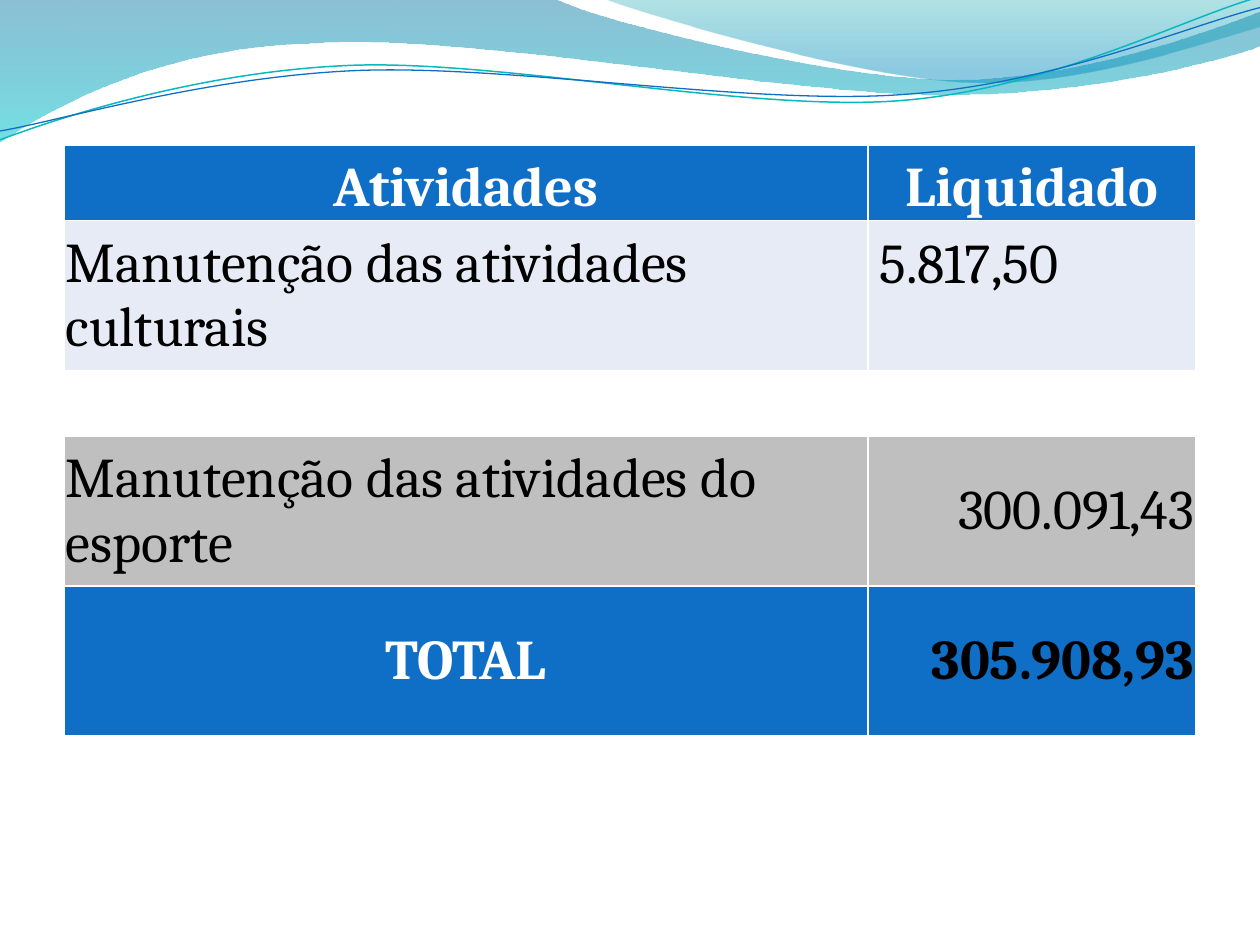
"""Builds a slide with a wave header and a table of settled spending."""
from math import cos, radians, sin

from lxml import etree
from pptx import Presentation
from pptx import util as u
from pptx.dml.color import RGBColor
from pptx.enum import text
from pptx.oxml.ns import qn

HUES = {"blue": "0F6FC6", "teal": "0AB8BF", "pale": "E7EBF5", "gray": "BFBFBF",
        "white": "FFFFFF", "black": "000000", "deep": "0074A1", "aqua": "00C6CF",
        "sea": "00A1A9", "sky": "008BBF"}
LEFT, MID, RIGHT = text.PP_ALIGN.LEFT, text.PP_ALIGN.CENTER, text.PP_ALIGN.RIGHT
SIZE, FACE = 32, "Cambria"
COLS = [6.38, 2.6]
ROWS = [
    (0.6, "blue", [("Atividades", MID, "white", True), ("Liquidado", MID, "white", True)]),
    (1.19, "pale", [("Manutenção das atividades culturais", LEFT, "black", False),
                    ("5.817,50", LEFT, "black", False)]),
    (0.49, "white", []),
    (1.19, "gray", [("Manutenção das atividades do esporte", LEFT, "black", False),
                    ("300.091,43", RIGHT, "black", False)]),
    (1.19, "blue", [("TOTAL", MID, "white", True), ("305.908,93", RIGHT, "black", True)]),
]
BANDS = [
    ((-0.01, -0.01, 10.02, 1.14),
     [(0, 0), (4.4, -0.01), (4.76, 0.17, 6.64, 0.63, 7.58, 0.63),
      (8.53, 0.63, 9.58, 0.26, 10, 0.09), (10.01, 0.36),
      (9.83, 0.44, 8.7, 0.76, 7.46, 0.75), (6.22, 0.75, 3.82, 0.28, 2.57, 0.34),
      (1.29, 0.36, 0.46, 0.83, -0.01, 1.13), (0, 0)],
     [(0, "deep", 45), (1, "aqua", 55)]),
    ((4.79, -0.01, 5.21, 0.7),
     [(4.79, -0.01), (5.09, 0.11, 6.82, 0.62, 7.69, 0.65),
      (8.56, 0.69, 9.61, 0.32, 10, 0.21), (10, 0), (4.79, -0.01)],
     [(0, "sea", 30), (0.8, "sky", 45)]),
]
WAVES = [
    ((-0.02, 0.22, 10.02, 0.71),
     [(0, 1.11), (0.48, 0.93, 1.58, 0.57, 2.77, 0.52),
      (3.95, 0.47, 5.93, 0.89, 7.13, 0.8), (8.33, 0.71, 9.38, 0.15, 9.98, -0.02)],
     "teal", 0.85),
    ((-0.02, 0.3, 10.03, 0.58),
     [(0, 1.04), (0.47, 0.96, 1.64, 0.61, 2.83, 0.56),
      (4.03, 0.51, 5.97, 0.84, 7.17, 0.75), (8.36, 0.67, 9.41, 0.21, 10, 0.06)],
     "blue", 0.75),
]
TILT = -2.7


def rgb(name):
    return RGBColor.from_string(HUES[name])


def local(box, x, y, tilt):
    left, top, wide, high = box
    turn = radians(-tilt)
    dx, dy = x - left - wide / 2, y - top - high / 2
    return (u.Inches(wide / 2 + dx * cos(turn) - dy * sin(turn)),
            u.Inches(high / 2 + dx * sin(turn) + dy * cos(turn)))


def draw(slide, box, segs, tilt=0, close=False):
    left, top, wide, high = (u.Inches(n) for n in box)
    pen = slide.shapes.build_freeform(left, top)
    pen.add_line_segments([(left + wide, top + high)], close=False)
    shape = pen.convert_to_shape()
    shape.shadow.inherit = False
    shape.rotation = tilt
    route = next(shape.element.iter(qn("a:path")))
    for node in list(route):
        route.remove(node)
    for n, seg in enumerate(segs):
        kind = "moveTo" if n == 0 else "lnTo" if len(seg) == 2 else "cubicBezTo"
        step = etree.SubElement(route, qn("a:" + kind))
        for spot in zip(seg[::2], seg[1::2]):
            x, y = local(box, *spot, tilt)
            etree.SubElement(step, qn("a:pt"), x=str(x), y=str(y))
    if close:
        etree.SubElement(route, qn("a:close"))
    return shape


def add_band(slide, box, segs, stops):
    shape = draw(slide, box, segs, close=True)
    shape.line.fill.background()
    shape.fill.gradient()
    shape.fill.gradient_angle = 270
    for stop, (pos, hue, alpha) in zip(shape.fill.gradient_stops, stops):
        stop.position = pos
        stop.color.rgb = rgb(hue)
    for node, (pos, hue, alpha) in zip(shape.element.spPr.iter(qn("a:srgbClr")), stops):
        etree.SubElement(node, qn("a:alpha"), val=str(alpha * 1000))


def add_wave(slide, box, segs, hue, width):
    shape = draw(slide, box, segs, TILT)
    shape.fill.background()
    shape.line.color.rgb = rgb(hue)
    shape.line.width = u.Pt(width)


def set_cell(cell, fill):
    props = cell._tc.get_or_add_tcPr()
    for side in ("lnL", "lnR", "lnT", "lnB"):
        line = etree.SubElement(props, qn("a:" + side), w=str(u.Pt(1)))
        solid = etree.SubElement(line, qn("a:solidFill"))
        etree.SubElement(solid, qn("a:srgbClr"), val=HUES["white"])
    cell.fill.solid()
    cell.fill.fore_color.rgb = rgb(fill)
    cell.margin_left = cell.margin_right = cell.margin_top = u.Inches(0.01)
    cell.margin_bottom = 0
    cell.vertical_anchor = text.MSO_ANCHOR.MIDDLE


def set_text(cell, words, align, hue, bold):
    para = cell.text_frame.paragraphs[0]
    para.text = words
    para.alignment = align
    font = para.runs[0].font
    font.name, font.size, font.bold = FACE, u.Pt(SIZE), bold
    font.color.rgb = rgb(hue)


def set_gap(cell):
    para = cell.text_frame.paragraphs[0]._p
    mark = etree.SubElement(para, qn("a:endParaRPr"), sz=str(SIZE * 100))
    etree.SubElement(mark, qn("a:latin"), typeface=FACE)


def add_grid(slide):
    frame = slide.shapes.add_table(len(ROWS), len(COLS), u.Inches(0.51), u.Inches(1.15),
                                   u.Inches(sum(COLS)), u.Inches(4.72))
    grid = frame.table
    for col, wide in zip(grid.columns, COLS):
        col.width = u.Inches(wide)
    for r, (tall, fill, items) in enumerate(ROWS):
        grid.rows[r].height = u.Inches(tall)
        for c in range(len(COLS)):
            cell = grid.cell(r, c)
            set_cell(cell, fill)
            if items:
                set_text(cell, *items[c])
            else:
                set_gap(cell)
            if r == 0:
                cell.vertical_anchor = text.MSO_ANCHOR.BOTTOM
    frame.height = u.Inches(4.72)
    first = grid.cell(1, 1)
    first.vertical_anchor = text.MSO_ANCHOR.TOP
    first.margin_left, first.margin_top = u.Inches(0.09), u.Inches(0.1)


def main():
    deck = Presentation()
    deck.slide_width, deck.slide_height = u.Inches(10), u.Inches(7.5)
    slide = deck.slides.add_slide(deck.slide_layouts[6])
    for band in BANDS:
        add_band(slide, *band)
    for wave in WAVES:
        add_wave(slide, *wave)
    add_grid(slide)
    deck.save("out.pptx")


if __name__ == "__main__":
    main()
